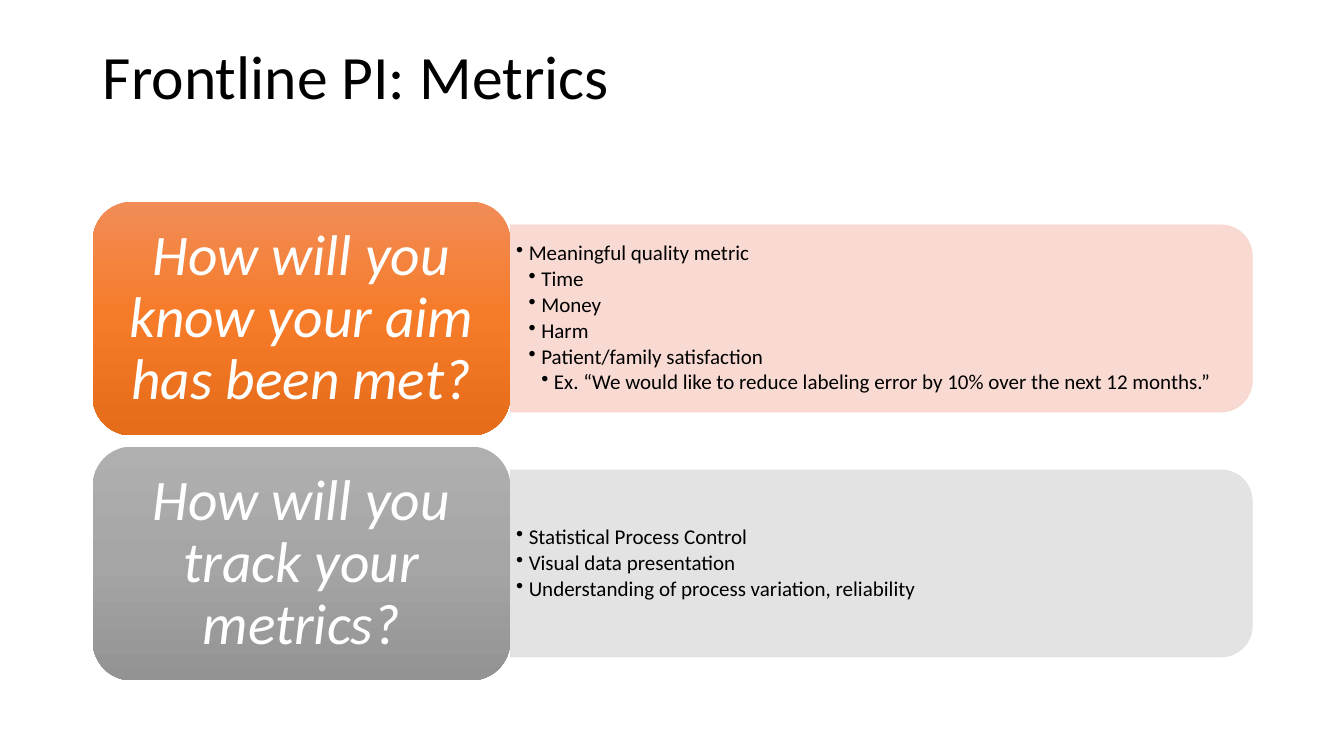
from lxml import etree
from pptx import Presentation
from pptx.dml.color import RGBColor
from pptx.enum.shapes import MSO_SHAPE
from pptx.enum.text import MSO_ANCHOR, MSO_AUTO_SIZE, PP_ALIGN
from pptx.oxml.ns import qn
from pptx.util import Inches, Pt

ROUND_RECTANGLE = MSO_SHAPE.ROUNDED_RECTANGLE
ROUND_TOP = MSO_SHAPE.ROUND_2_SAME_RECTANGLE
TOP, MIDDLE = MSO_ANCHOR.TOP, MSO_ANCHOR.MIDDLE
LEFT, CENTER = PP_ALIGN.LEFT, PP_ALIGN.CENTER
NO_AUTOFIT = MSO_AUTO_SIZE.NONE

BLACK = RGBColor(0x00, 0x00, 0x00)
WHITE = RGBColor(0xFF, 0xFF, 0xFF)
PALE_ORANGE = RGBColor(0xF8, 0xD7, 0xCE)
PALE_GRAY = RGBColor(0xE1, 0xE1, 0xE1)
ORANGES = [RGBColor(0xF1, 0x8C, 0x57), RGBColor(0xF6, 0x7B, 0x28), RGBColor(0xE5, 0x6C, 0x19)]
GRAYS = [RGBColor(0xAF, 0xAF, 0xAF), RGBColor(0xA5, 0xA5, 0xA5), RGBColor(0x93, 0x93, 0x93)]

FONT = "Calibri"
SLIDE_WIDTH, SLIDE_HEIGHT = 13.33, 7.5
MARGIN = 0.92
CONTENT_WIDTH = 11.5
ROWS_TOP, ROW_HEIGHT, ROW_GAP = 2, 2.32, 0.11
LABEL_SHARE = 0.36   # of the row's width
BAR_SHARE = 0.8      # of the row's height
BULLET_STEP = 0.125

ROWS = [
    ("How will you know your aim has been met?", ORANGES, PALE_ORANGE,
     [(1, "Meaningful quality metric"),
      (2, "Time"),
      (2, "Money"),
      (2, "Harm"),
      (2, "Patient/family satisfaction"),
      (3, "Ex. “We would like to reduce labeling error by 10% over the next 12 months.”")]),
    ("How will you track your metrics?", GRAYS, PALE_GRAY,
     [(1, "Statistical Process Control"),
      (1, "Visual data presentation"),
      (1, "Understanding of process variation, reliability")]),
]


def write_text(shape, items, size, color, align=LEFT, anchor=MIDDLE, italic=False,
               insets=(0.1, 0.05), space_after=0):
    """Fill a shape with (bullet level, text) items; level 0 has no bullet."""
    frame = shape.text_frame
    frame.word_wrap = True
    frame.auto_size = NO_AUTOFIT
    frame.vertical_anchor = anchor
    frame.margin_left = frame.margin_right = Inches(insets[0])
    frame.margin_top = frame.margin_bottom = Inches(insets[1])
    for index, (level, text) in enumerate(items):
        paragraph = frame.add_paragraph() if index else frame.paragraphs[0]
        paragraph.alignment = align
        paragraph.line_spacing = 0.9
        paragraph.space_after = Pt(space_after)
        run = paragraph.add_run()
        run.text = text
        run.font.name = FONT
        run.font.size = Pt(size)
        run.font.italic = italic
        run.font.color.rgb = color
        if level:
            add_bullet(paragraph, level)


def add_bullet(paragraph, level):
    properties = paragraph._p.get_or_add_pPr()
    properties.set("lvl", str(level))
    properties.set("marL", str(Inches(level * BULLET_STEP)))
    properties.set("indent", str(-Inches(BULLET_STEP)))
    etree.SubElement(properties, qn("a:buChar")).set("char", "•")


def set_vertical_gradient(shape, colors):
    shape.fill.gradient()
    gradient = shape._element.spPr.find(qn("a:gradFill"))
    for child in list(gradient):
        gradient.remove(child)
    stops = etree.SubElement(gradient, qn("a:gsLst"))
    for index, color in enumerate(colors):
        stop = etree.SubElement(stops, qn("a:gs"), pos=str(index * 100000 // (len(colors) - 1)))
        etree.SubElement(stop, qn("a:srgbClr"), val=str(color))
    etree.SubElement(gradient, qn("a:lin"), ang="5400000", scaled="0")


def add_bar(slide, left, top, width, height, color):
    """Draw a bar rounded on its right side: a shape with a round top, turned by 90 degrees."""
    center_x, center_y = left + width / 2, top + height / 2
    bar = slide.shapes.add_shape(
        ROUND_TOP, Inches(center_x - height / 2), Inches(center_y - width / 2),
        Inches(height), Inches(width))
    bar.rotation = 90
    bar.shadow.inherit = False
    bar.fill.solid()
    bar.fill.fore_color.rgb = color
    bar.line.color.rgb = color
    bar.line.width = Pt(0.5)
    for color_element in bar._element.spPr.iter(qn("a:srgbClr")):
        etree.SubElement(color_element, qn("a:alpha"), val="90000")


def add_row(slide, left, top, width, height, question, label_colors, bar_color, answers):
    label_width = width * LABEL_SHARE
    bar_left, bar_width = left + label_width, width - label_width
    bar_height = height * BAR_SHARE
    bar_top = top + (height - bar_height) / 2
    add_bar(slide, bar_left, bar_top, bar_width, bar_height, bar_color)

    answer_box = slide.shapes.add_textbox(
        Inches(bar_left), Inches(bar_top + 0.09), Inches(bar_width - 0.09),
        Inches(bar_height - 0.18))
    write_text(answer_box, answers, 15, BLACK, insets=(0.06, 0.03), space_after=2.25)

    label = slide.shapes.add_shape(
        ROUND_RECTANGLE, Inches(left), Inches(top), Inches(label_width), Inches(height))
    label.shadow.inherit = False
    label.line.fill.background()
    set_vertical_gradient(label, label_colors)
    write_text(label, [(0, question)], 41, WHITE, align=CENTER, italic=True, insets=(0.17, 0.09))


def add_title(slide, left, top, width, height, text):
    title = slide.shapes.title
    title.left, title.top = Inches(left), Inches(top)
    title.width, title.height = Inches(width), Inches(height)
    write_text(title, [(0, text)], 44, BLACK, anchor=TOP, insets=(0.1, 0.06))


def main():
    presentation = Presentation()
    presentation.slide_width = Inches(SLIDE_WIDTH)
    presentation.slide_height = Inches(SLIDE_HEIGHT)
    title_only = presentation.slide_layouts[5]
    slide = presentation.slides.add_slide(title_only)
    add_title(slide, MARGIN, 0.4, CONTENT_WIDTH, 1.45, "Frontline PI: Metrics")
    for index, row in enumerate(ROWS):
        top = ROWS_TOP + index * (ROW_HEIGHT + ROW_GAP)
        add_row(slide, MARGIN, top, CONTENT_WIDTH, ROW_HEIGHT, *row)
    presentation.save("out.pptx")


if __name__ == "__main__":
    main()
